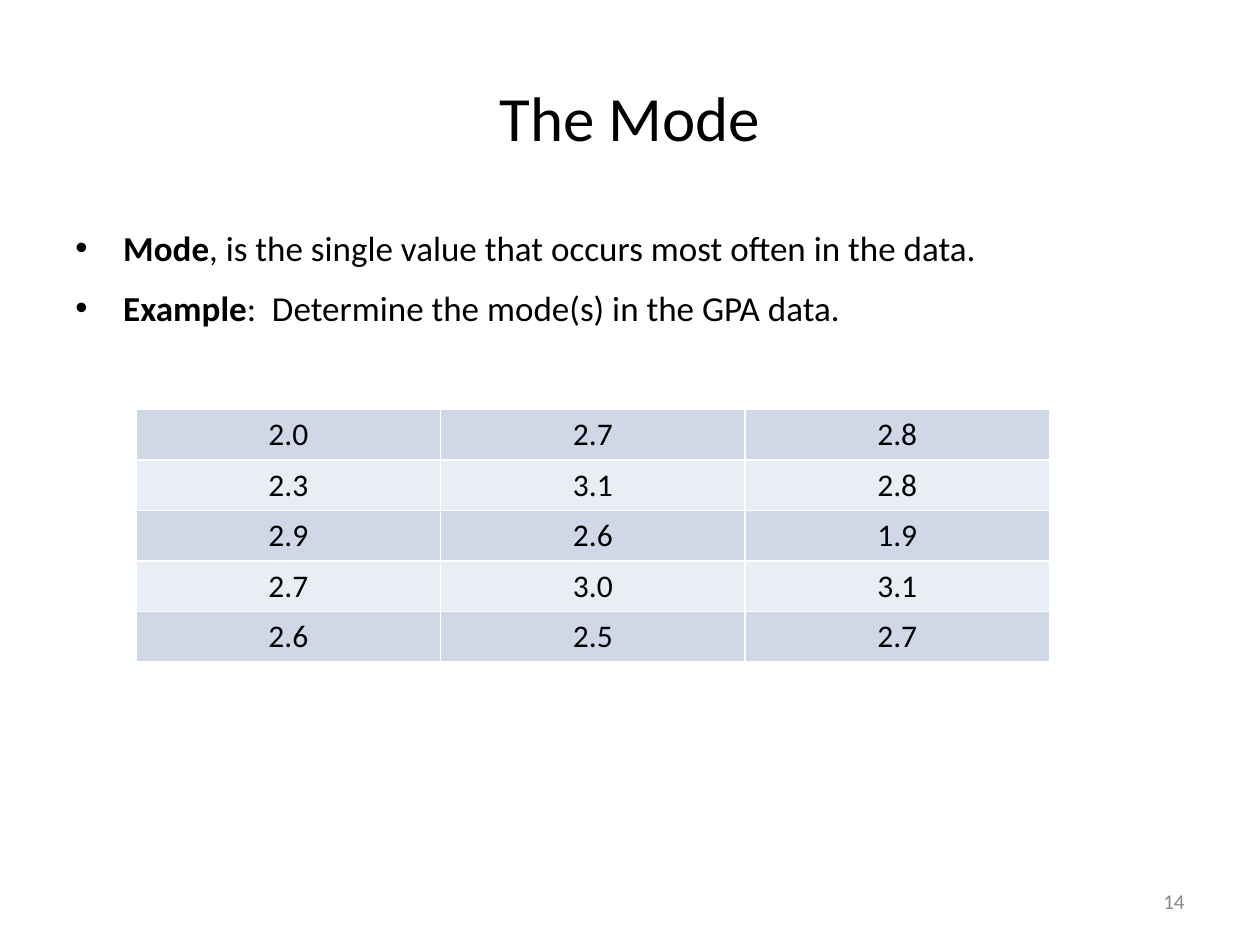
from lxml import etree
from pptx import Presentation
from pptx import util as u
from pptx.dml.color import RGBColor
from pptx.enum import text
from pptx.oxml.ns import qn

FONT = "Calibri"
BLACK, GREY, WHITE = "000000", "898989", "FFFFFF"
BANDS = ("D0D8E8", "E9EDF4")
GPA_ROWS = [
    ("2.0", "2.7", "2.8"),
    ("2.3", "3.1", "2.8"),
    ("2.9", "2.6", "1.9"),
    ("2.7", "3.0", "3.1"),
    ("2.6", "2.5", "2.7"),
]
POINTS = [
    ("Mode", ", is the single value that occurs most often in the data."),
    ("Example", ":  Determine the mode(s) in the GPA data."),
]


def color(value):
    return RGBColor.from_string(value)


def box(*lengths):
    return [u.Inches(n) for n in lengths]


def add_run(p, words, size, fill=BLACK, bold=False):
    r = p.add_run()
    r.text = words
    r.font.name = FONT
    r.font.size = u.Pt(size)
    r.font.bold = bold
    r.font.color.rgb = color(fill)


def add_title(s, words):
    sp = s.shapes.title
    sp.left, sp.top, sp.width, sp.height = box(0.5, 0.3, 9, 1.25)
    tf = sp.text_frame
    tf.vertical_anchor = text.MSO_ANCHOR.MIDDLE
    p = tf.paragraphs[0]
    p.alignment = text.PP_ALIGN.CENTER
    add_run(p, words, 36)


def add_bullet(p):
    pPr = p._p.get_or_add_pPr()
    pPr.set("marL", str(u.Inches(0.38)))
    pPr.set("indent", str(u.Inches(-0.38)))
    etree.SubElement(pPr, qn("a:buFont"), typeface="Arial")
    etree.SubElement(pPr, qn("a:buChar"), char="•")


def add_points(s, points):
    tf = s.shapes.add_textbox(*box(0.5, 1.75, 9, 4.95)).text_frame
    tf.word_wrap = True
    for i, (term, rest) in enumerate(points):
        p = tf.add_paragraph() if i else tf.paragraphs[0]
        p.space_after = u.Pt(10)
        add_bullet(p)
        add_run(p, term, 20, bold=True)
        add_run(p, rest, 20)


def add_borders(cell):
    tcPr = cell._tc.get_or_add_tcPr()
    for i, side in enumerate(("lnL", "lnR", "lnT", "lnB")):
        ln = etree.Element(qn(f"a:{side}"), w=str(u.Pt(1)))
        fill = etree.SubElement(ln, qn("a:solidFill"))
        etree.SubElement(fill, qn("a:srgbClr"), val=WHITE)
        tcPr.insert(i, ln)


def add_gpa_table(s, rows):
    frame = s.shapes.add_table(len(rows), len(rows[0]), *box(1.08, 3.25, 7.25, 2))
    table = frame.table
    table.first_row = False
    for i, values in enumerate(rows):
        for j, value in enumerate(values):
            cell = table.cell(i, j)
            cell.fill.solid()
            cell.fill.fore_color.rgb = color(BANDS[i % 2])
            add_borders(cell)
            p = cell.text_frame.paragraphs[0]
            p.alignment = text.PP_ALIGN.CENTER
            add_run(p, value, 18)


def add_page_number(s, number):
    tf = s.shapes.add_textbox(*box(7.17, 6.95, 2.33, 0.4)).text_frame
    tf.word_wrap = True
    tf.vertical_anchor = text.MSO_ANCHOR.MIDDLE
    p = tf.paragraphs[0]
    p.alignment = text.PP_ALIGN.RIGHT
    add_run(p, number, 12, GREY)


def main():
    prs = Presentation()
    prs.slide_width, prs.slide_height = box(10, 7.5)
    s = prs.slides.add_slide(prs.slide_layouts[5])
    add_title(s, "The Mode")
    add_page_number(s, "14")
    add_points(s, POINTS)
    add_gpa_table(s, GPA_ROWS)
    prs.save("out.pptx")


if __name__ == "__main__":
    main()
